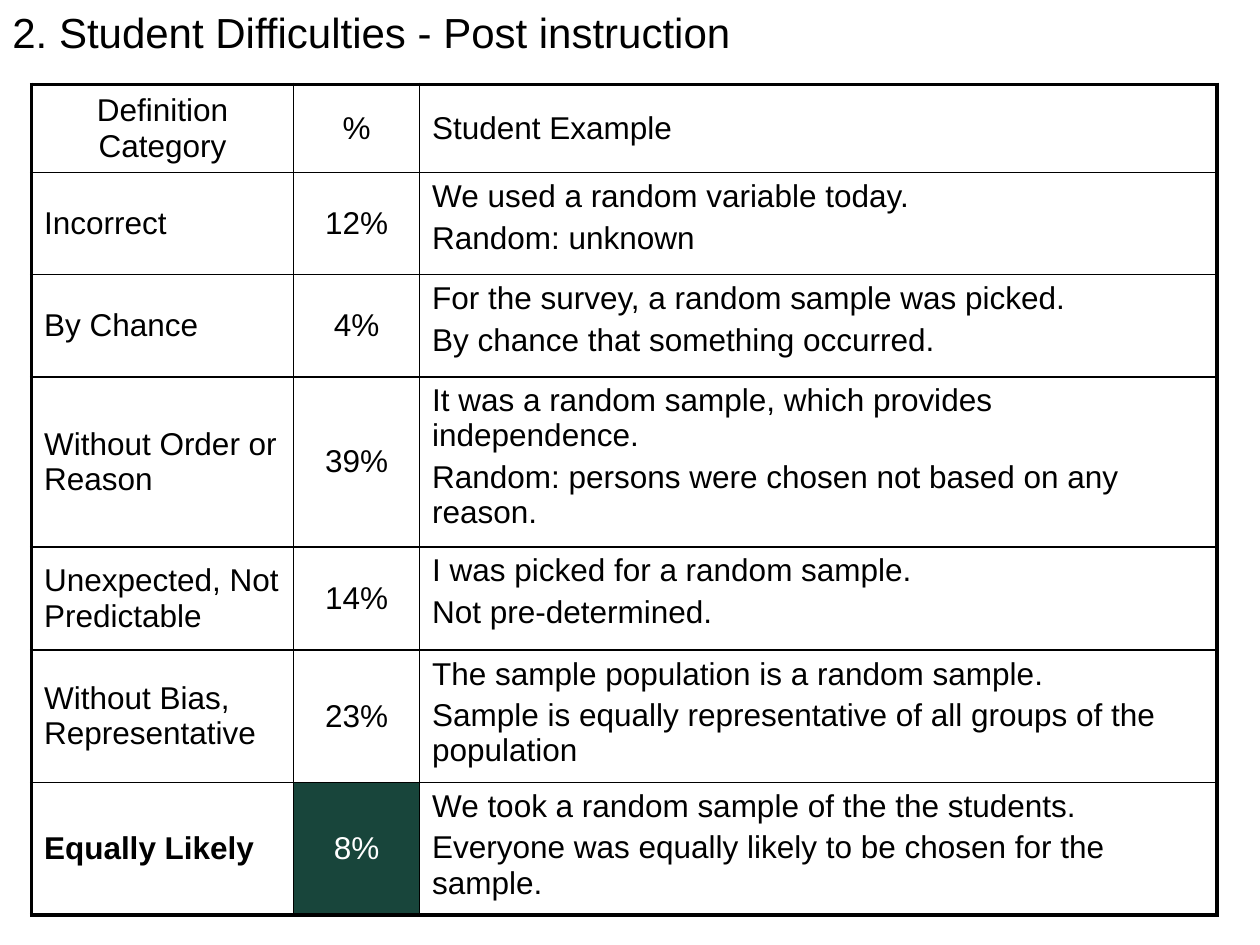
from dataclasses import dataclass

from lxml.etree import SubElement
from pptx import Presentation
from pptx.dml.color import RGBColor
from pptx.enum.text import MSO_ANCHOR as Anchor, MSO_AUTO_SIZE as AutoSize, PP_ALIGN as Align
from pptx.oxml.ns import qn
from pptx.util import Inches, Pt


@dataclass(frozen=True)
class Theme:
    font: str = "Arial"
    title_size: float = 24
    body_size: float = 18
    paragraph_gap: float = 3.6
    outer_line: float = 2.25
    inner_line: float = 1
    ink: str = "000000"
    paper: str = "FFFFFF"
    accent: str = "18453B"


THEME = Theme()
TITLE = "2. Student Difficulties - Post instruction"
HEADER = ("Definition Category", "%", ["Student Example"])
CATEGORIES = [
    ("Incorrect", "12%", ["We used a random variable today.", "Random: unknown"]),
    ("By Chance", "4%", ["For the survey, a random sample was picked.",
                         "By chance that something occurred."]),
    ("Without Order or Reason", "39%",
     ["It was a random sample, which provides independence.",
      "Random: persons were chosen not based on any reason."]),
    ("Unexpected, Not Predictable", "14%",
     ["I was picked for a random sample.", "Not pre-determined."]),
    ("Without Bias, Representative", "23%",
     ["The sample population is a random sample.",
      "Sample is equally representative of all groups of the population"]),
    ("Equally Likely", "8%",
     ["We took a random sample of the the students.",
      "Everyone was equally likely to be chosen for the sample."]),
]
COLUMN_WIDTHS = (2.08, 1, 6.33)
ROW_HEIGHTS = (0.68, 0.81, 0.81, 1.35, 0.82, 1.05, 1.05)
TABLE_LEFT, TABLE_TOP = 0.25, 0.67


def write(frame, lines, size, color=THEME.ink, bold=False, align=Align.LEFT):
    for index, line in enumerate(lines):
        para = frame.add_paragraph() if index else frame.paragraphs[0]
        para.alignment = align
        if index:
            para.space_before = Pt(THEME.paragraph_gap)
        span = para.add_run()
        span.text = line
        span.font.name = THEME.font
        span.font.size = Pt(size)
        span.font.bold = bold
        span.font.color.rgb = RGBColor.from_string(color)


def set_borders(cell, widths):
    """Draw left, right, top and bottom lines; they must precede the fill in the XML."""
    properties = cell._tc.get_or_add_tcPr()
    for index, (side, width) in enumerate(zip("LRTB", widths)):
        line = SubElement(properties, qn(f"a:ln{side}"), w=str(Pt(width)))
        fill = SubElement(line, qn("a:solidFill"))
        SubElement(fill, qn("a:srgbClr"), val=THEME.ink)
        properties.insert(index, line)


def add_title(page):
    box = page.shapes.add_textbox(0, 0, Inches(5.91), Inches(0.5))
    box.text_frame.word_wrap = False
    box.text_frame.auto_size = AutoSize.SHAPE_TO_FIT_TEXT
    write(box.text_frame, [TITLE], THEME.title_size)


def add_category_table(page):
    rows = [HEADER, *CATEGORIES]
    last_row, last_column = len(rows) - 1, len(COLUMN_WIDTHS) - 1
    table = page.shapes.add_table(
        len(rows), len(COLUMN_WIDTHS), Inches(TABLE_LEFT), Inches(TABLE_TOP),
        Inches(sum(COLUMN_WIDTHS)), Inches(sum(ROW_HEIGHTS))).table
    for column, width in zip(table.columns, COLUMN_WIDTHS):
        column.width = Inches(width)
    for row, height in zip(table.rows, ROW_HEIGHTS):
        row.height = Inches(height)

    for r, (category, percent, examples) in enumerate(rows):
        for c, lines in enumerate(([category], [percent], examples)):
            cell = table.cell(r, c)
            highlighted = r == last_row and c == 1
            centred = c == 1 or (r == 0 and c == 0)
            cell.fill.solid()
            cell.fill.fore_color.rgb = RGBColor.from_string(
                THEME.accent if highlighted else THEME.paper)
            cell.vertical_anchor = Anchor.TOP if r and c == last_column else Anchor.MIDDLE
            write(cell.text_frame, lines, THEME.body_size,
                  color=THEME.paper if highlighted else THEME.ink,
                  bold=r == last_row and c == 0,
                  align=Align.CENTER if centred else Align.LEFT)
            on_edge = (c == 0, c == last_column, r == 0, r == last_row)
            set_borders(cell, [THEME.outer_line if edge else THEME.inner_line
                               for edge in on_edge])


def main():
    deck = Presentation()
    deck.slide_width, deck.slide_height = Inches(10), Inches(7.5)
    page = deck.slides.add_slide(deck.slide_layouts[6])
    add_title(page)
    add_category_table(page)
    deck.save("out.pptx")


if __name__ == "__main__":
    main()
